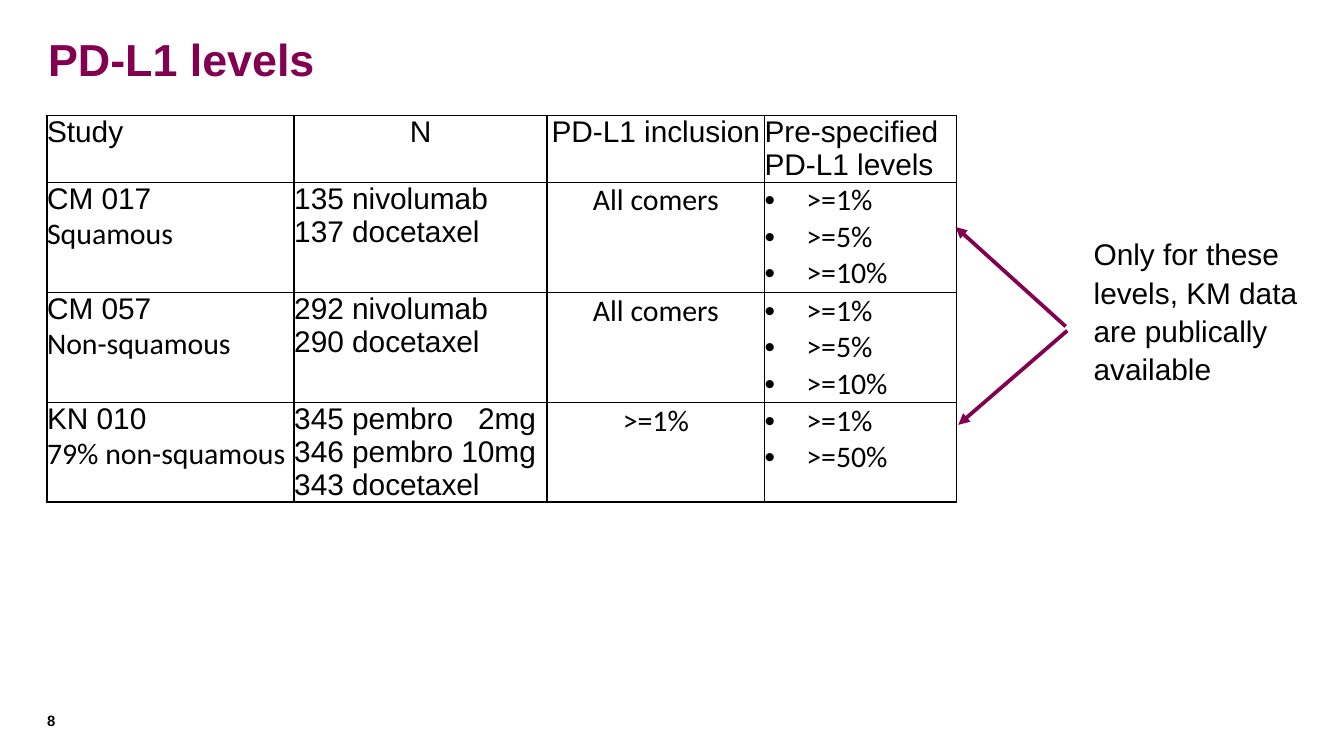
"""Build the slide on PD-L1 levels in three lung cancer studies."""
from typing import NamedTuple

from lxml import etree
from pptx import Presentation
from pptx.dml.color import RGBColor
from pptx.enum.shapes import MSO_CONNECTOR
from pptx.enum.text import MSO_ANCHOR, PP_ALIGN
from pptx.oxml.ns import qn
from pptx.util import Cm, Pt

PLUM = RGBColor(0x83, 0x00, 0x51)
BLACK = RGBColor(0, 0, 0)
LEFT, CENTER = PP_ALIGN.LEFT, PP_ALIGN.CENTER
MIDDLE, TOP = MSO_ANCHOR.MIDDLE, MSO_ANCHOR.TOP
STRAIGHT = MSO_CONNECTOR.STRAIGHT
SANS, BODY = "Arial", "Calibri"
COLS = (4.67, 4.78, 4.11, 3.63)
ROWS = (1.27, 2.08, 2.08, 1.88)
INDENT = Cm(0.79)
DOSE_TAB = Cm(4.57)


class Line(NamedTuple):
    text: str
    font: str = SANS
    align: PP_ALIGN = LEFT
    bullet: bool = False


class Study(NamedTuple):
    name: str
    kind: str
    arms: str
    entry: str
    levels: tuple[str, ...]


class Label(NamedTuple):
    text: str
    box: tuple[float, float, float, float]
    size: int
    color: RGBColor = BLACK
    bold: bool = False
    inset: bool = True
    anchor: MSO_ANCHOR = TOP
    pitch: float = 1.0


class Arrow(NamedTuple):
    start: tuple[float, float]
    end: tuple[float, float]


HEAD = (
    Line("Study"),
    Line("N", align=CENTER),
    Line("PD-L1 inclusion", align=CENTER),
    Line("Pre-specified\vPD-L1 levels"),
)
LEVELS = (">=1%", ">=5%", ">=10%")
STUDIES = (
    Study("CM 017", "Squamous", "135 nivolumab\v137 docetaxel", "All comers", LEVELS),
    Study("CM 057", "Non-squamous", "292 nivolumab\v290 docetaxel", "All comers", LEVELS),
    Study("KN 010", "79% non-squamous",
          "345 pembro\t2mg\v346 pembro 10mg\v343 docetaxel", ">=1%", (">=1%", ">=50%")),
)
LABELS = (
    Label("PD-L1 levels", (0.66, 0.41, 24.36, 1.4), 24, PLUM, True, anchor=MIDDLE),
    Label("8", (0.89, 13.46, 1.09, 0.46), 8, bold=True, inset=False),
    Label("Only for these levels, KM data are publically available",
          (20.42, 4.29, 4.6, 3), 16, pitch=1.07),
)
ARROWS = (
    Arrow((20.14, 6.17), (18.06, 4.29)),
    Arrow((20.17, 6.25), (18.11, 8.03)),
)


def style(para, font: str, size: int, color: RGBColor, bold: bool = False) -> None:
    for run in para.runs:
        run.font.name = font
        run.font.size = Pt(size)
        run.font.bold = bold
        run.font.color.rgb = color
    for gap in para._p.findall(qn("a:br")):
        etree.SubElement(gap, qn("a:rPr"), sz=str(size * 100))


def clear(item) -> None:
    item.margin_left = item.margin_right = 0
    item.margin_top = item.margin_bottom = 0


def add_label(slide, label: Label) -> None:
    box = slide.shapes.add_textbox(*map(Cm, label.box))
    frame = box.text_frame
    frame.word_wrap = True
    frame.vertical_anchor = label.anchor
    if not label.inset:
        clear(frame)
    frame.text = label.text
    para = frame.paragraphs[0]
    para.line_spacing = label.pitch
    style(para, SANS, label.size, label.color, label.bold)


def add_arrow(slide, arrow: Arrow) -> None:
    link = slide.shapes.add_connector(STRAIGHT, *map(Cm, arrow.start + arrow.end))
    link.line.color.rgb = PLUM
    link.line.width = Pt(2)
    etree.SubElement(link.line._get_or_add_ln(), qn("a:tailEnd"), type="triangle")
    etree.SubElement(link._element.spPr, qn("a:effectLst"))


def border(cell) -> None:
    props = cell._tc.get_or_add_tcPr()
    for spot, side in enumerate("LRTB"):
        edge = etree.Element(qn(f"a:ln{side}"), w=str(Pt(1)))
        fill = etree.SubElement(edge, qn("a:solidFill"))
        etree.SubElement(fill, qn("a:srgbClr"), val=str(BLACK))
        props.insert(spot, edge)


def fill_cell(cell, lines: tuple[Line, ...]) -> None:
    clear(cell)
    cell.fill.background()
    border(cell)
    frame = cell.text_frame
    for spot, line in enumerate(lines):
        para = frame.add_paragraph() if spot else frame.paragraphs[0]
        para.text = line.text
        para.alignment = line.align
        props = para._p.get_or_add_pPr()
        if line.bullet:
            props.set("marL", str(INDENT))
            props.set("indent", str(-INDENT))
            etree.SubElement(props, qn("a:buFont"), typeface=SANS)
            etree.SubElement(props, qn("a:buChar"), char="•")
        if "\t" in line.text:
            tabs = etree.SubElement(props, qn("a:tabLst"))
            etree.SubElement(tabs, qn("a:tab"), pos=str(DOSE_TAB), algn="r")
        style(para, line.font, 16, BLACK)


def add_grid(slide) -> None:
    area = map(Cm, (0.89, 2.18, sum(COLS), sum(ROWS)))
    table = slide.shapes.add_table(len(ROWS), len(COLS), *area).table
    table.first_row = table.horz_banding = False
    for col, width in zip(table.columns, COLS):
        col.width = Cm(width)
    for row, height in zip(table.rows, ROWS):
        row.height = Cm(height)
    grid = [[(line,) for line in HEAD]]
    for study in STUDIES:
        grid.append([
            (Line(study.name), Line(study.kind, BODY)),
            (Line(study.arms),),
            (Line(study.entry, BODY, CENTER),),
            tuple(Line(level, BODY, bullet=True) for level in study.levels),
        ])
    for row, cells in zip(table.rows, grid):
        for cell, lines in zip(row.cells, cells):
            fill_cell(cell, lines)


def main() -> None:
    deck = Presentation()
    deck.slide_width, deck.slide_height = Cm(25.4), Cm(14.29)
    slide = deck.slides.add_slide(deck.slide_layouts[6])
    add_grid(slide)
    for arrow in ARROWS:
        add_arrow(slide, arrow)
    for label in LABELS:
        add_label(slide, label)
    deck.save("out.pptx")


if __name__ == "__main__":
    main()
